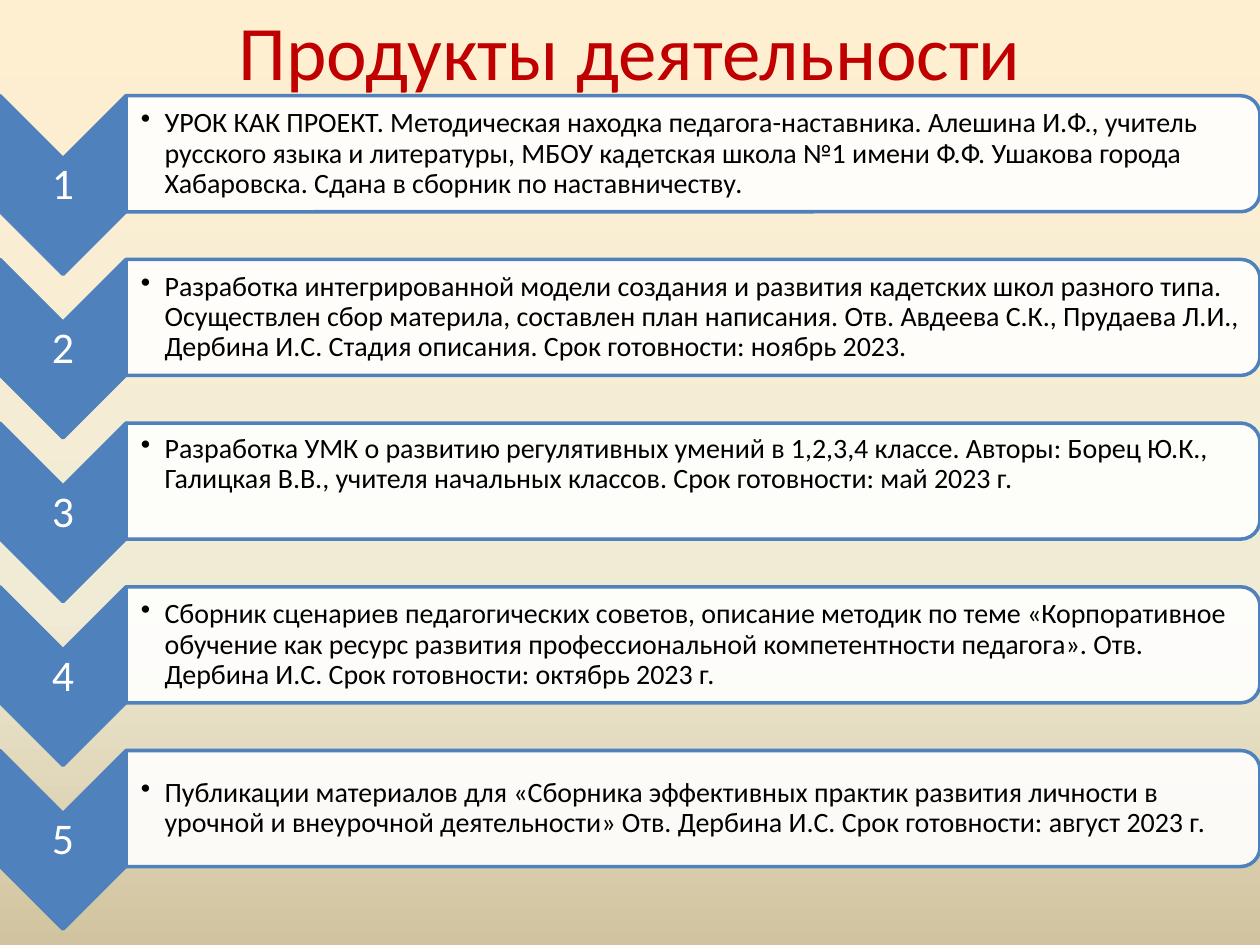
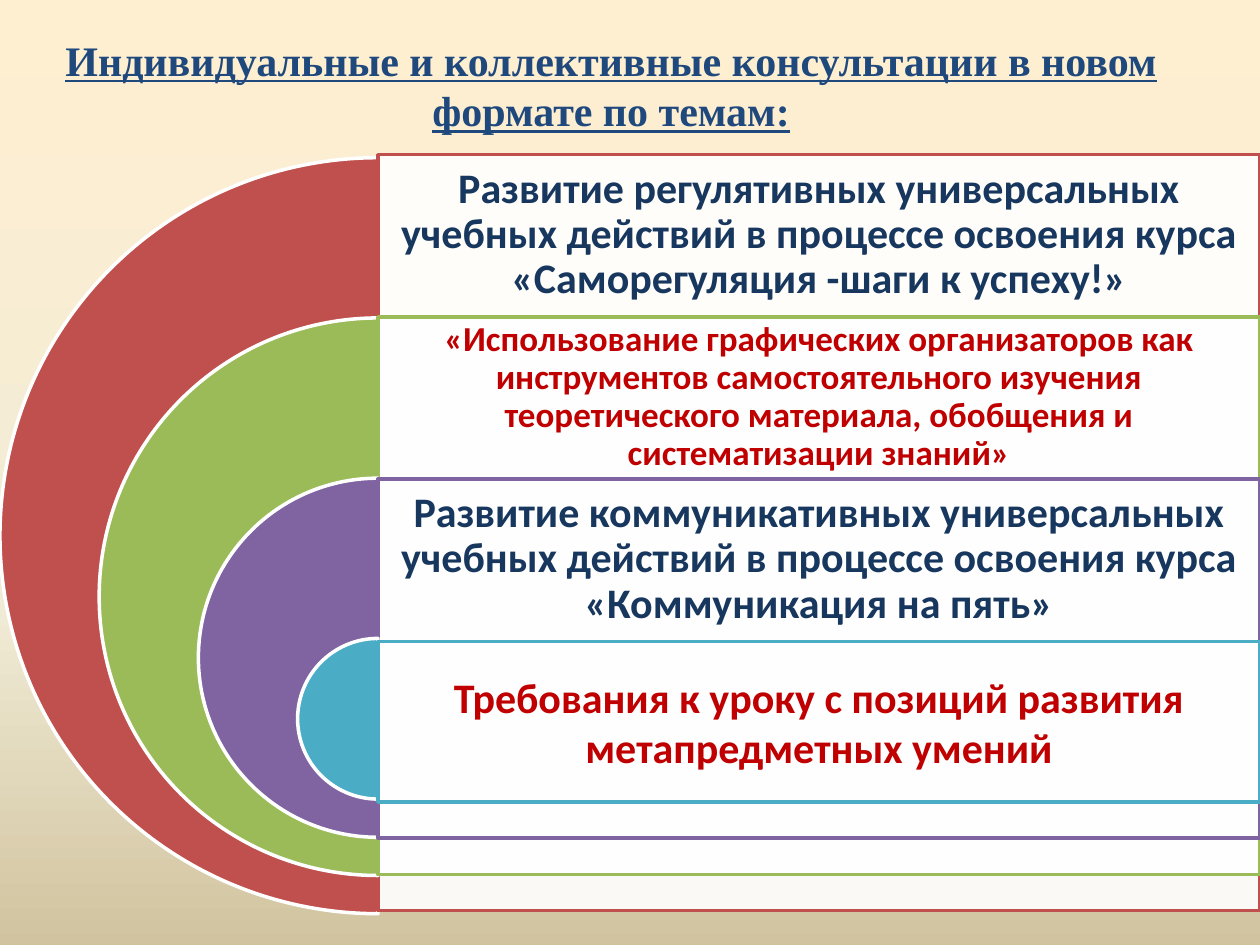
"""Build two slides: a numbered list of products and nested consultation topics."""
from lxml.etree import SubElement
from pptx import Presentation
from pptx.dml.color import RGBColor as RGB
from pptx.enum.shapes import MSO_SHAPE as SHAPE
from pptx.enum.text import MSO_ANCHOR as ANCHOR, PP_ALIGN as ALIGN
from pptx.oxml.ns import qn
from pptx.util import Cm, Pt

RED, NAVY, TITLE_BLUE = RGB(0xC0, 0, 0), RGB(0x17, 0x37, 0x5E), RGB(0x1F, 0x49, 0x7D)
BLUE, WHITE, BLACK = RGB(0x4F, 0x81, 0xBD), RGB(255, 255, 255), RGB(0, 0, 0)
BRICK, GREEN = RGB(0xC0, 0x50, 0x4D), RGB(0x9B, 0xBB, 0x59)
PURPLE, AQUA = RGB(0x80, 0x64, 0xA2), RGB(0x4B, 0xAC, 0xC6)
BACKGROUND = [(0, RGB(0xFF, 0xEF, 0xD1)), (65, RGB(0xF0, 0xEB, 0xD5)), (100, RGB(0xD1, 0xC3, 0x9F))]

PRODUCTS_TITLE = "Продукты деятельности"
PRODUCTS = [
    ("УРОК КАК ПРОЕКТ. Методическая находка педагога-наставника. Алешина И.Ф., учитель "
     "русского языка и литературы, МБОУ кадетская школа №1 имени Ф.Ф. Ушакова города "
     "Хабаровска. Сдана в сборник по наставничеству.", 0.03),
    ("Разработка интегрированной модели создания и развития кадетских школ разного типа. "
     "Осуществлен сбор материла, составлен план написания. Отв. Авдеева С.К., Прудаева Л.И., "
     "Дербина И.С. Стадия описания. Срок готовности: ноябрь 2023.", 0.03),
    ("Разработка УМК о развитию регулятивных умений в 1,2,3,4 классе. Авторы: Борец Ю.К., "
     "Галицкая В.В., учителя начальных классов. Срок готовности: май 2023 г.", 0.7),
    ("Сборник сценариев педагогических советов, описание методик по теме «Корпоративное "
     "обучение как ресурс развития профессиональной компетентности педагога». Отв. "
     "Дербина И.С. Срок готовности: октябрь 2023 г.", 0.03),
    ("Публикации материалов для «Сборника эффективных практик развития личности в "
     "урочной и внеурочной деятельности» Отв. Дербина И.С. Срок готовности: август 2023 г.", 0.03),
]
TOPICS_TITLE = "Индивидуальные и коллективные консультации в новом формате по темам:"
TOPICS = [
    ("Развитие регулятивных универсальных учебных действий в процессе освоения курса "
     "«Саморегуляция -шаги к успеху!»", BRICK, NAVY, 24, 0.25, 0.9),
    ("«Использование графических организаторов как инструментов самостоятельного изучения "
     "теоретического материала, обобщения и систематизации знаний»", GREEN, RED, 20, 0.2, 0.9),
    ("Развитие коммуникативных универсальных учебных действий в процессе освоения курса "
     "«Коммуникация на пять»", PURPLE, NAVY, 24, 0.25, 0.9),
    ("Требования к уроку с позиций развития метапредметных умений", AQUA, RED, 24, 0.25, 1),
]


def add_text(s, text, x, y, w, h, size=24, color=BLACK, font="Calibri", bold=False,
             underline=False, align=ALIGN.CENTER, spacing=1, insets=(0.25, 0.13, 0.25, 0.13),
             bullet=False):
    tf = s.shapes.add_textbox(Cm(x), Cm(y), Cm(w), Cm(h)).text_frame
    tf.word_wrap, tf.vertical_anchor = True, ANCHOR.MIDDLE
    tf.margin_left, tf.margin_top, tf.margin_right, tf.margin_bottom = map(Cm, insets)
    p = tf.paragraphs[0]
    if bullet:
        pPr = p._p.get_or_add_pPr()
        pPr.set("marL", str(Cm(0.48)))
        pPr.set("indent", str(Cm(-0.48)))
        SubElement(pPr, qn("a:buChar")).set("char", "•")
    p.alignment, p.line_spacing = align, spacing
    r = p.add_run()
    r.text = text
    r.font.name, r.font.size, r.font.color.rgb = font, Pt(size), color
    r.font.bold, r.font.underline = bold, underline


def add_block(s, kind, x, y, w, h, fill, line, turned=False, alpha=None):
    if turned:
        x, y, w, h = x + (w - h) / 2, y + (h - w) / 2, h, w
    sp = s.shapes.add_shape(kind, Cm(x), Cm(y), Cm(w), Cm(h))
    sp.rotation = 90 if turned else 0
    sp.shadow.inherit = False
    sp.fill.solid()
    sp.fill.fore_color.rgb = fill
    sp.line.color.rgb, sp.line.width = line, Pt(2)
    if alpha:
        color = sp.element.spPr.find(qn("a:solidFill")).find(qn("a:srgbClr"))
        SubElement(color, qn("a:alpha")).set("val", str(alpha * 1000))
    return sp


def set_background(master):
    fill = master.background.fill
    fill.gradient()
    fill.gradient_angle = 270
    stops = master.element.xpath("./p:cSld/p:bg//a:gsLst")[0]
    for old in list(stops):
        stops.remove(old)
    for position, color in BACKGROUND:
        stop = SubElement(stops, qn("a:gs"))
        stop.set("pos", str(position * 1000))
        SubElement(stop, qn("a:srgbClr")).set("val", str(color))


def build_products(s):
    add_text(s, PRODUCTS_TITLE, 1.27, 0.08, 22.86, 1.85, size=44, color=RED)
    for i, (text, bottom) in enumerate(PRODUCTS):
        y = 1.93 + 3.3 * i
        add_block(s, SHAPE.CHEVRON, 0, y, 2.54, 3.6, BLUE, BLUE, turned=True)
        add_text(s, str(i + 1), 0, y + 1.27, 2.54, 1.09, size=25, color=WHITE,
                 spacing=0.9, insets=(0.05,) * 4)
        add_block(s, SHAPE.ROUND_2_SAME_RECTANGLE, 2.54, y, 22.86, 2.34, WHITE, BLUE,
                  turned=True, alpha=90)
        add_text(s, text, 2.54, y + 0.12, 22.76, 2.11, size=16, align=ALIGN.LEFT,
                 spacing=0.9, insets=(0.3, 0.03, 0.03, bottom), bullet=True)


def build_topics(s):
    center = 7.62
    for i, (text, accent, color, size, inset, spacing) in enumerate(TOPICS):
        side, bar_y = 2 * center - 4 * i, 3.12 + 3.27 * i
        pie = add_block(s, SHAPE.PIE, center - side / 2, 3.18 + 3.23 * i, side, side, accent, WHITE)
        pie.adjustments[0], pie.adjustments[1] = 54, 162
        add_block(s, SHAPE.RECTANGLE, center, bar_y, 17.78, side, WHITE, accent, alpha=90)
        add_text(s, text, center, bar_y, 17.78, 3.23, size=size, color=color, bold=True,
                 spacing=spacing, insets=(inset,) * 4)
    add_text(s, TOPICS_TITLE, 0.89, 0.71, 22.86, 2, color=TITLE_BLUE,
             font="Times New Roman", bold=True, underline=True)


def main():
    prs = Presentation()
    prs.slide_width, prs.slide_height = Cm(25.4), Cm(19.05)
    set_background(prs.slide_master)
    for build in (build_products, build_topics):
        build(prs.slides.add_slide(prs.slide_layouts[6]))
    prs.save("out.pptx")


if __name__ == "__main__":
    main()
